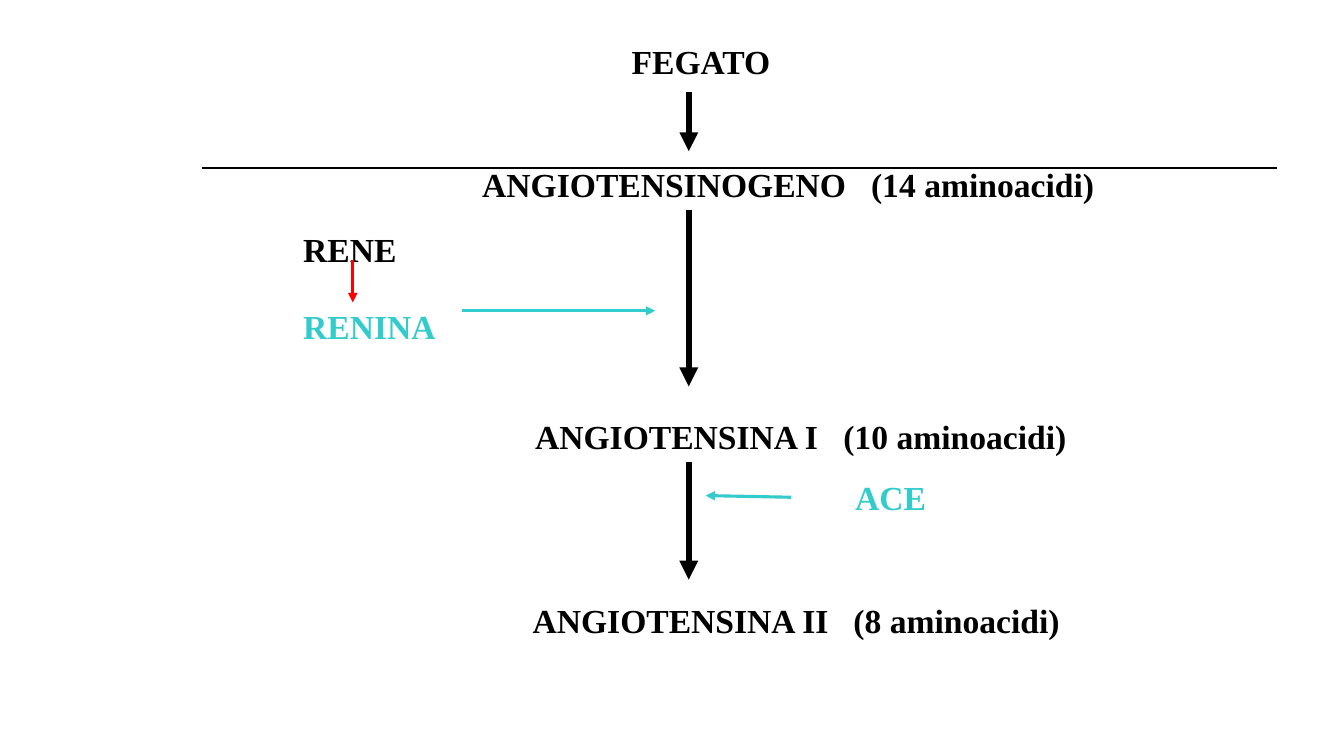
from lxml import etree
from pptx import Presentation
from pptx.dml.color import RGBColor
from pptx.enum.shapes import MSO_CONNECTOR
from pptx.enum.text import MSO_ANCHOR, PP_ALIGN
from pptx.oxml.ns import qn
from pptx.util import Inches, Pt

STRAIGHT = MSO_CONNECTOR.STRAIGHT
MIDDLE = MSO_ANCHOR.MIDDLE
LEFT = PP_ALIGN.LEFT

BLACK = RGBColor(0x00, 0x00, 0x00)
RED = RGBColor(0xFF, 0x00, 0x00)
TURQUOISE = RGBColor(0x33, 0xCC, 0xCC)

# The slide is a grid of 160 columns by 90 rows, twelve to the inch.
CELL = Inches(1) / 12
COLUMNS, ROWS = 160, 90
LABEL_ROWS = 5
AXIS = 82  # column of the main chain of arrows

presentation = Presentation()
presentation.slide_width = round(COLUMNS * CELL)
presentation.slide_height = round(ROWS * CELL)
slide = presentation.slides.add_slide(presentation.slide_layouts[6])


def add_label(text, column, row, width=20, color=BLACK, size=24, tab=None):
    """Write one line starting at column and centred on row; tab is in columns."""
    box = slide.shapes.add_textbox(
        round(column * CELL), round((row - LABEL_ROWS / 2) * CELL),
        round(width * CELL), round(LABEL_ROWS * CELL))
    frame = box.text_frame
    frame.margin_left = frame.margin_right = frame.margin_top = frame.margin_bottom = 0
    frame.word_wrap = True
    frame.vertical_anchor = MIDDLE
    paragraph = frame.paragraphs[0]
    paragraph.text = text
    paragraph.alignment = LEFT
    font = paragraph.font
    for target in [font] + [run.font for run in paragraph.runs]:
        target.name = "Times New Roman"
        target.size = Pt(size)
        target.bold = True
        target.color.rgb = color
    if tab:
        properties = paragraph._p.get_or_add_pPr()
        stops = etree.Element(qn("a:tabLst"))
        etree.SubElement(stops, qn("a:tab"), pos=str(round(tab * CELL)), algn="l")
        properties.insert(0, stops)


def add_line(start, end, color, width, arrow=True):
    """Join two (column, row) points."""
    line = slide.shapes.add_connector(
        STRAIGHT, *(round(value * CELL) for value in (*start, *end)))
    line.line.color.rgb = color
    line.line.width = Pt(width)
    if arrow:
        etree.SubElement(line.line._get_or_add_ln(), qn("a:tailEnd"), type="triangle")
    etree.SubElement(line._element.spPr, qn("a:effectLst"))


add_line((24, 20), (152, 20), BLACK, 1, arrow=False)

# Main chain: liver, angiotensinogen, angiotensin I and II
add_label("FEGATO", 75.2, 7.25)
for name, amino_acids, column, row, tab in [
    ("ANGIOTENSINOGENO", 14, 57.4, 21.9, 46.3),
    ("ANGIOTENSINA I", 10, 63.7, 51.9, 36.7),
    ("ANGIOTENSINA II", 8, 63.4, 73.8, 38.2),
]:
    add_label(f"{name}\t({amino_acids} aminoacidi)", column, row, width=80, tab=tab)

for top, bottom in [(11, 18), (25, 46), (55, 69)]:
    add_line((AXIS, top), (AXIS, bottom), BLACK, 4.5)

# Kidney and the enzymes that act on the chain
add_label("RENE", 36.1, 29.65)
add_label("RENINA", 36.1, 38.8, color=TURQUOISE)
add_label("ACE", 101.8, 59.2, color=TURQUOISE)
add_line((42, 31), (42, 36), RED, 2.25)
add_line((55, 37), (78, 37), TURQUOISE, 2.25)
add_line((94.2, 59.2), (84, 59), TURQUOISE, 2.25)

presentation.save("out.pptx")
